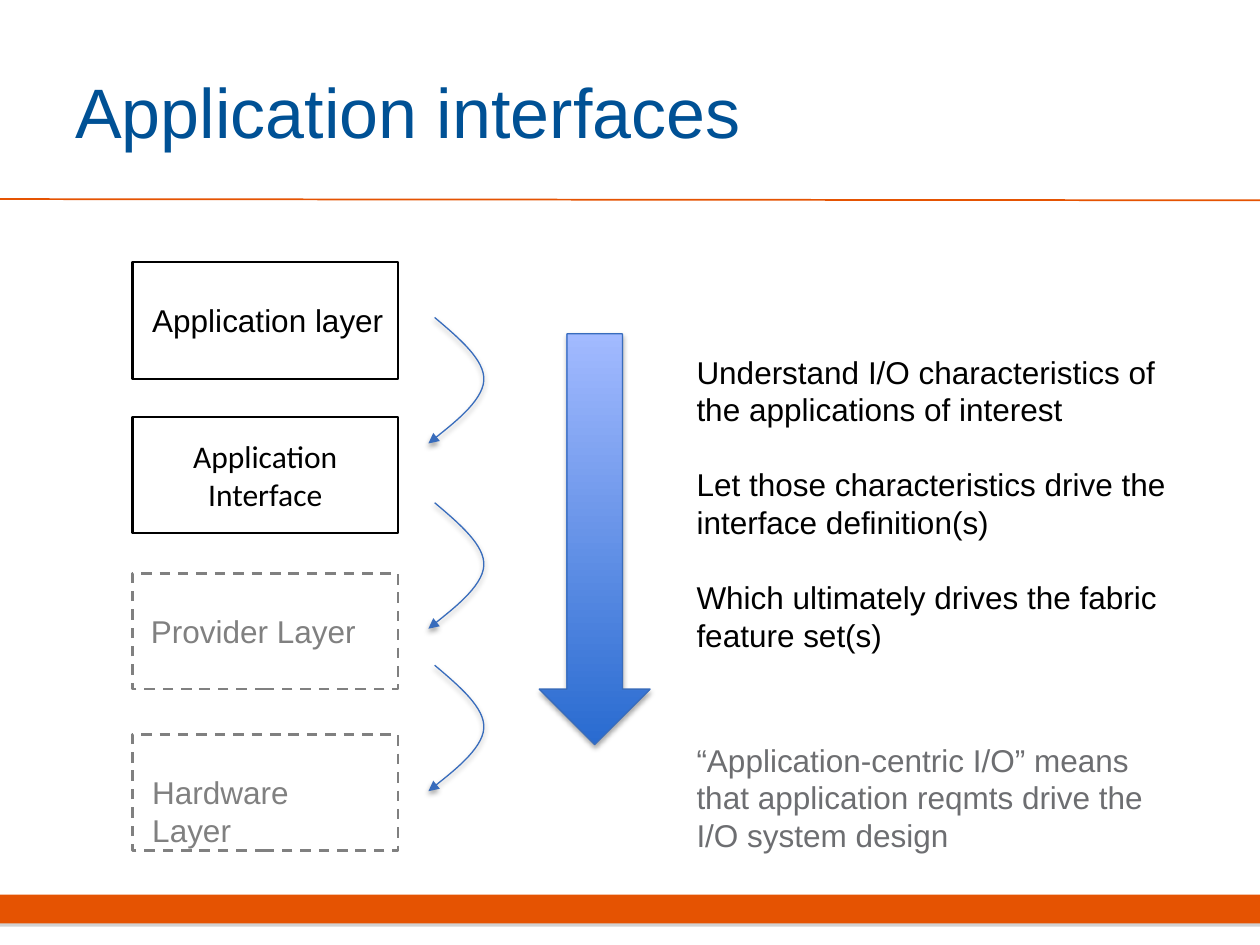
import pptx
import pptx.util
import pptx.dml.color
import pptx.enum.dml
import pptx.enum.shapes
import pptx.enum.text
import pptx.oxml
import pptx.oxml.ns
from lxml import etree

Inches, Pt = pptx.util.Inches, pptx.util.Pt
RGBColor = pptx.dml.color.RGBColor
MSO_SHAPE = pptx.enum.shapes.MSO_SHAPE
ALIGN = pptx.enum.text.PP_ALIGN
ANCHOR = pptx.enum.text.MSO_ANCHOR
qn = pptx.oxml.ns.qn

BLACK = RGBColor(0x00, 0x00, 0x00)
GREY = RGBColor(0x80, 0x80, 0x80)
NOTE_GREY = RGBColor(0x6D, 0x6E, 0x71)
TITLE_BLUE = RGBColor(0x00, 0x51, 0x95)
ORANGE = RGBColor(0xE5, 0x53, 0x02)
ARROW_LINE = RGBColor(0x38, 0x6C, 0xBC)
ARROW_DARK = RGBColor(0x29, 0x6B, 0xD0)
ARROW_LIGHT = RGBColor(0xA2, 0xBA, 0xFF)


def cast_shadow(shape, color, blur):
    """Give the shape a soft shadow straight below it."""
    shape.shadow.inherit = False
    effects = shape._element.spPr.find(qn("a:effectLst"))
    outer = etree.SubElement(effects, qn("a:outerShdw"), blurRad=str(Pt(blur)),
                             dist=str(Pt(1.8)), dir="5400000", rotWithShape="0")
    tint = etree.SubElement(outer, qn("a:srgbClr"), val=str(color))
    etree.SubElement(tint, qn("a:alpha"), val="35000")


def write(frame, paragraphs, color, size=18, font="Arial", align=ALIGN.LEFT, gap=0, leading=None):
    """Fill a text frame with one run per paragraph."""
    for index, words in enumerate(paragraphs):
        paragraph = frame.paragraphs[0] if index == 0 else frame.add_paragraph()
        paragraph.alignment = align
        if leading:
            paragraph.line_spacing = Pt(leading)
        if index:
            paragraph.space_before = Pt(gap)
        run = paragraph.add_run()
        run.text = words
        run.font.size = Pt(size)
        run.font.name = font
        run.font.color.rgb = color


def add_text(slide, left, top, width, height, paragraphs, color, anchor=ANCHOR.TOP, **style):
    """Place a wrapping text box."""
    box = slide.shapes.add_textbox(Inches(left), Inches(top), Inches(width), Inches(height))
    box.text_frame.word_wrap = True
    box.text_frame.vertical_anchor = anchor
    write(box.text_frame, paragraphs, color, **style)


def add_frame(slide, top, bottom_band=False):
    """Draw the header rule and the footer band."""
    band = slide.shapes.add_shape(MSO_SHAPE.RECTANGLE, 0, Inches(top), Inches(10), Inches(0.23))
    band.fill.solid()
    band.fill.fore_color.rgb = ORANGE
    band.line.fill.background()
    cast_shadow(band, GREY, 0)
    rule = slide.shapes.add_connector(pptx.enum.shapes.MSO_CONNECTOR.STRAIGHT,
                                      0, Inches(1.58), Inches(10), Inches(1.59))
    rule.line.color.rgb = ORANGE
    rule.line.width = Pt(1)
    etree.SubElement(rule._element.spPr, qn("a:effectLst"))


def add_layer(slide, left, top, height, color, dashed):
    """Draw the outline of one layer and return it."""
    layer = slide.shapes.add_shape(MSO_SHAPE.RECTANGLE, Inches(left), Inches(top),
                                   Inches(2.11), Inches(height))
    layer.shadow.inherit = False
    layer.fill.background()
    layer.line.color.rgb = color
    layer.line.width = Pt(1.5)
    if dashed:
        layer.line.dash_style = pptx.enum.dml.MSO_LINE.DASH
    return layer


def add_layer_stack(slide, left):
    """Build the four layers with their labels."""
    add_layer(slide, left, 2.08, 0.93, BLACK, False)
    add_text(slide, left + 0.06, 2.34, 2.05, 0.4, ["Application layer"], BLACK)
    interface = add_layer(slide, left, 3.31, 0.92, BLACK, False)
    interface.text_frame.vertical_anchor = ANCHOR.MIDDLE
    write(interface.text_frame, ["Application Interface"], BLACK, font="Calibri",
          align=ALIGN.CENTER)
    add_layer(slide, left, 4.55, 0.92, GREY, True)
    add_text(slide, left + 0.05, 4.81, 1.84, 0.4, ["Provider Layer"], GREY)
    add_layer(slide, left, 5.83, 0.92, GREY, True)
    add_text(slide, left + 0.06, 6.09, 1.81, 0.4, ["Hardware Layer"], GREY, leading=21.5)


def add_curved_arrow(slide, left, top):
    """Draw a bowed arrow made of two Bezier segments."""
    start, *controls = [(Inches(left + x), Inches(top + y)) for x, y in (
        (0.05, 0), (0.25, 0.17), (0.45, 0.34), (0.44, 0.5),
        (0.43, 0.67), (0, 1), (0, 1))]
    builder = slide.shapes.build_freeform(*start)
    builder.add_line_segments(controls, close=False)
    curve = builder.convert_to_shape()
    outline = curve._element.spPr.find(".//" + qn("a:path"))
    segments = outline.findall(qn("a:lnTo"))
    for first in range(0, len(segments), 3):
        bezier = etree.SubElement(outline, qn("a:cubicBezTo"))
        for segment in segments[first:first + 3]:
            bezier.append(segment[0])
            outline.remove(segment)
    curve.fill.background()
    curve.line.color.rgb = ARROW_LINE
    curve.line.width = Pt(0.75)
    etree.SubElement(curve.line._get_or_add_ln(), qn("a:tailEnd"), type="triangle")
    cast_shadow(curve, BLACK, 3.1)


def add_drive_arrow(slide, left, top, width, height):
    """Draw the large gradient arrow pointing down."""
    arrow = slide.shapes.add_shape(MSO_SHAPE.DOWN_ARROW, Inches(left), Inches(top),
                                   Inches(width), Inches(height))
    arrow.fill.gradient()
    arrow.fill.gradient_angle = 90
    for stop, position, color in zip(arrow.fill.gradient_stops, (0, 1),
                                     (ARROW_DARK, ARROW_LIGHT)):
        stop.position = position
        stop.color.rgb = color
    arrow.line.color.rgb = ARROW_LINE
    arrow.line.width = Pt(0.75)
    cast_shadow(arrow, BLACK, 3.1)


def add_explanation(slide, left):
    """Write the three steps and the closing remark."""
    add_text(slide, left, 2.75, 4.14, 2.52, [
        "Understand I/O characteristics of the applications of interest",
        "Let those characteristics drive the interface definition(s)",
        "Which ultimately drives the fabric feature set(s)",
    ], BLACK, gap=21.5, leading=21.5)
    add_text(slide, left, 5.83, 3.96, 1.01, [
        "“Application-centric I/O” means that application reqmts drive the I/O system design",
    ], NOTE_GREY, leading=21.5)


def main():
    """Build and save the slide."""
    deck = pptx.Presentation()
    deck.slide_width, deck.slide_height = Inches(10), Inches(7.5)
    slide = deck.slides.add_slide(deck.slide_layouts[6])
    add_frame(slide, 7.1)
    add_text(slide, 0.5, 0.25, 8.17, 1.25, ["Application interfaces"], TITLE_BLUE,
             anchor=ANCHOR.MIDDLE, size=40)
    add_layer_stack(slide, 1.05)
    for top in (2.52, 3.99, 5.28):
        add_curved_arrow(slide, 3.4, top)
    add_drive_arrow(slide, 4.28, 2.65, 0.88, 3.26)
    add_explanation(slide, 5.43)
    deck.save("out.pptx")


if __name__ == "__main__":
    main()
